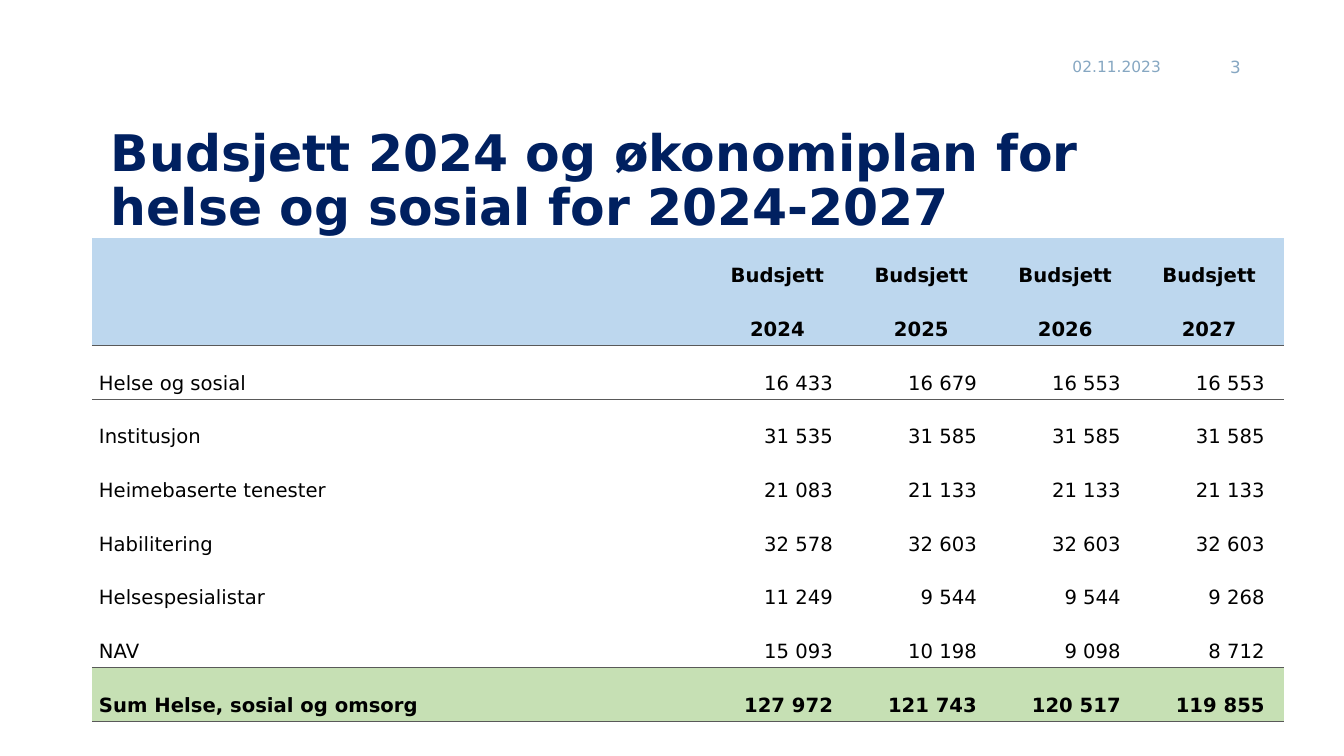
import pptx
import pptx.util
import pptx.dml.color
import pptx.enum.text
import pptx.oxml.ns
import lxml.etree

Pt = pptx.util.Pt
ALIGN = pptx.enum.text.PP_ALIGN
MIDDLE = pptx.enum.text.MSO_ANCHOR.MIDDLE
BOTTOM = pptx.enum.text.MSO_ANCHOR.BOTTOM

COLORS = {
    "title": "002060",
    "meta": "86A7C2",
    "text": "000000",
    "head": "BDD7EE",
    "sum": "C6E0B4",
    "rule": "595959",
}
NO_STYLE = "{2D5ABB26-0587-4C30-8999-92F81FD0307C}"

HEADER = [
    [""] + ["Budsjett"] * 4,
    ["", "2024", "2025", "2026", "2027"],
]
BODY = [
    ["Helse og sosial", "16 433", "16 679", "16 553", "16 553"],
    ["Institusjon", "31 535", "31 585", "31 585", "31 585"],
    ["Heimebaserte tenester", "21 083", "21 133", "21 133", "21 133"],
    ["Habilitering", "32 578", "32 603", "32 603", "32 603"],
    ["Helsespesialistar", "11 249", "9 544", "9 544", "9 268"],
    ["NAV", "15 093", "10 198", "9 098", "8 712"],
]
TOTAL = ["Sum Helse, sosial og omsorg", "127 972", "121 743", "120 517", "119 855"]


class Deck:
    """Holds the text style and the current slide."""

    font = "DejaVu Sans"

    def __init__(self, prs):
        self.slide = prs.slides.add_slide(prs.slide_layouts[5])

    def add_text(self, p, text, size, color, align=ALIGN.LEFT, bold=False):
        p.alignment = align
        r = p.add_run()
        r.text = text
        for name, value in {"name": self.font, "size": Pt(size), "bold": bold}.items():
            setattr(r.font, name, value)
        r.font.color.rgb = pptx.dml.color.RGBColor.from_string(COLORS[color])

    def frame(self, sp):
        tf = sp.text_frame
        fmt = {"word_wrap": True, "vertical_anchor": MIDDLE,
               "auto_size": pptx.enum.text.MSO_AUTO_SIZE.NONE}
        for name, value in fmt.items():
            setattr(tf, name, value)
        return tf.paragraphs[0]

    def title(self, text, left, top, width, height):
        sp = self.slide.shapes.title
        box = {"left": left, "top": top, "width": width, "height": height}
        for name, value in box.items():
            setattr(sp, name, Pt(value))
        p = self.frame(sp)
        p.line_spacing = 0.9
        self.add_text(p, text, 36, "title", bold=True)

    def label(self, text, box, size, align=ALIGN.LEFT):
        sp = self.slide.shapes.add_textbox(*map(Pt, box))
        self.add_text(self.frame(sp), text, size, "meta", align)

    def border(self, cell, side):
        ln = lxml.etree.SubElement(cell._tc.get_or_add_tcPr(),
                                   pptx.oxml.ns.qn("a:ln" + side), w=str(Pt(0.5)))
        fill = lxml.etree.SubElement(ln, pptx.oxml.ns.qn("a:solidFill"))
        lxml.etree.SubElement(fill, pptx.oxml.ns.qn("a:srgbClr"), val=COLORS["rule"])

    def cell(self, cell, text, align, indent, fill, sides):
        fmt = {"vertical_anchor": BOTTOM, "margin_left": Pt(5), "margin_right": Pt(5 + indent),
               "margin_top": Pt(2.9), "margin_bottom": Pt(2.9)}
        for name, value in fmt.items():
            setattr(cell, name, value)
        for side in sides:
            self.border(cell, side)
        if fill:
            cell.fill.solid()
            cell.fill.fore_color.rgb = pptx.dml.color.RGBColor.from_string(COLORS[fill])
        else:
            cell.fill.background()
        if text:
            self.add_text(cell.text_frame.paragraphs[0], text, 14, "text", align, bool(fill))

    def table(self, left, top, widths, row_height):
        rows = HEADER + BODY + [TOTAL]
        last = len(rows) - 1
        ruled = {len(HEADER) - 1, last - 1, last}  # rows with a line below
        sp = self.slide.shapes.add_table(len(rows), len(widths), Pt(left), Pt(top),
                                         Pt(sum(widths)), Pt(row_height * len(rows)))
        tbl = sp.table
        tbl.first_row = tbl.horz_banding = False
        tbl._tbl.tblPr.find(pptx.oxml.ns.qn("a:tableStyleId")).text = NO_STYLE
        for col, width in zip(tbl.columns, widths):
            col.width = Pt(width)
        for i, row in enumerate(rows):
            tbl.rows[i].height = Pt(row_height)
            head = i < len(HEADER)
            fill = "head" if head else "sum" if i == last else None
            sides = ["T"] * (i - 1 in ruled) + ["B"] * (i in ruled)
            for j, text in enumerate(row):
                if head:
                    align, indent = ALIGN.CENTER, 4.5
                elif j:
                    align, indent = ALIGN.RIGHT, 9
                else:
                    align, indent = ALIGN.LEFT, 0
                self.cell(tbl.cell(i, j), text, align, indent, fill, sides)


def main():
    prs = pptx.Presentation()
    prs.slide_width, prs.slide_height = Pt(960), Pt(540)
    deck = Deck(prs)

    # Date and slide number
    deck.label("02.11.2023", (759, 33, 83, 29), 11)
    deck.label("3", (852.5, 33, 41, 29), 12, ALIGN.RIGHT)

    # Heading
    deck.title("Budsjett 2024 og økonomiplan for helse og sosial for 2024-2027",
               72, 78, 822, 104)

    # Budget table
    deck.table(65.7, 170, [440.5] + [102.8] * 4, 38.35)

    prs.save("out.pptx")


if __name__ == "__main__":
    main()
